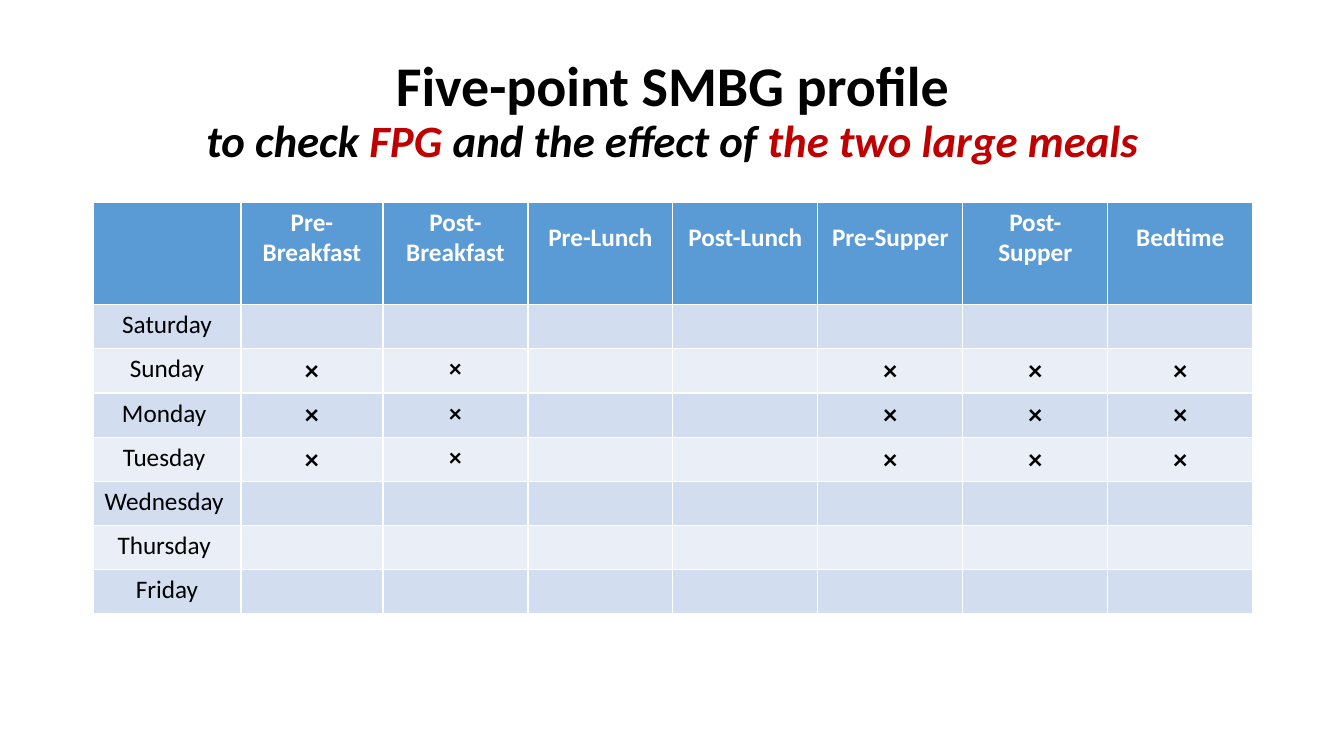
import pptx
import pptx.util
import pptx.dml.color
import pptx.enum.text

Pt = pptx.util.Pt
RGB = pptx.dml.color.RGBColor
ALIGN = pptx.enum.text.PP_ALIGN
ANCHOR = pptx.enum.text.MSO_ANCHOR

BLACK = RGB(0, 0, 0)
WHITE = RGB(255, 255, 255)
RED = RGB(0xC0, 0, 0)
BLUE = RGB(0x5B, 0x9B, 0xD5)
BANDS = RGB(0xD2, 0xDE, 0xEF), RGB(0xEA, 0xEF, 0xF7)


def px(n):
    return pptx.util.Emu(round(n * 914400 / 100.8))


def style(font, size, color, bold):
    font.name = "Calibri"
    font.size = Pt(size)
    font.color.rgb = color
    font.bold = bold


deck = pptx.Presentation()
deck.slide_width, deck.slide_height = px(1344), px(756)
slide = deck.slides.add_slide(deck.slide_layouts[5])

title = slide.shapes.title
title.left, title.top, title.width, title.height = px(93), px(40), px(1159), px(146)
frame = title.text_frame
frame.word_wrap = True
frame.vertical_anchor = ANCHOR.MIDDLE
head = frame.paragraphs[0]
head.alignment = ALIGN.CENTER
head.line_spacing = 0.9
run = head.add_run()
run.text = "Five-point SMBG profile"
style(run.font, 40, BLACK, True)
head.add_line_break()
for text, color in [
    ("to check ", BLACK),
    ("FPG", RED),
    (" and the effect of ", BLACK),
    ("the two large meals", RED),
]:
    run = head.add_run()
    run.text = text
    style(run.font, 32, color, True)
    run.font.italic = True

times = ["", "Pre-Breakfast", "Post-Breakfast", "Pre-Lunch", "Post-Lunch",
         "Pre-Supper", "Post-Supper", "Bedtime"]
days = ["Saturday", "Sunday", "Monday ", "Tuesday ", "Wednesday ", "Thursday ", "Friday"]
tested = {"Sunday", "Monday ", "Tuesday "}
checks = ["×", "×", "", "", "×", "×", "×"]
rows = [times] + [[day] + (checks if day in tested else [""] * 7) for day in days]
widths = [148, 142] + [145] * 6
heights = [101] + [44] * 7

table = slide.shapes.add_table(
    len(rows), len(times), px(93), px(202), px(sum(widths)), px(sum(heights))
).table
for col, width in zip(table.columns, widths):
    col.width = px(width)
for row, height in zip(table.rows, heights):
    row.height = px(height)

for r, row in enumerate(rows):
    for c, text in enumerate(row):
        cell = table.cell(r, c)
        cell.fill.solid()
        cell.fill.fore_color.rgb = BANDS[(r - 1) % 2] if r else BLUE
        if r == 0:
            cell.vertical_anchor = ANCHOR.MIDDLE
            cell.margin_bottom = px(36)
        cell.text = text
        para = cell.text_frame.paragraphs[0]
        para.alignment = ALIGN.CENTER
        size = 20 if text == "×" and c != 2 else 18
        style(para.font, size, BLACK if r else WHITE, r == 0 or c > 0)

deck.save("out.pptx")
